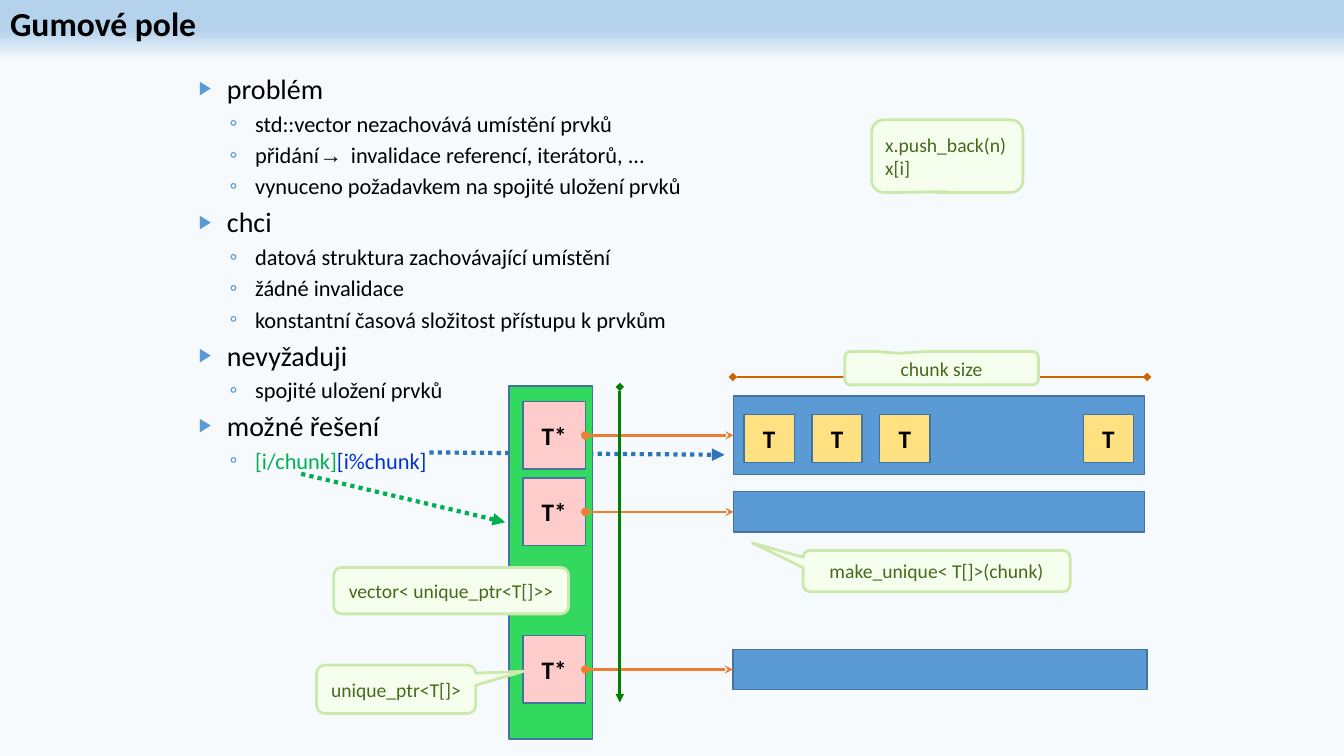
from lxml.etree import SubElement as Sub
from pptx import Presentation
from pptx.dml.color import RGBColor as RGB
from pptx.enum.dml import MSO_LINE as DASH
from pptx.enum.shapes import MSO_CONNECTOR as LINK, MSO_SHAPE as KIND
from pptx.enum.text import MSO_ANCHOR as ANCHOR, PP_ALIGN as ALIGN
from pptx.oxml.ns import qn
from pptx.util import Cm, Pt

FONT = "Calibri"
HUES = {
    "black": "000000", "band": "B5D2EC", "pale": "F7FAFD",
    "blue": "5B9BD5", "edge": "43739E", "gold": "FFE181",
    "green": "33D95E", "pink": "FFCCCC", "orange": "ED7D31",
    "note": "F6FFED", "rim": "CCE9AD", "moss": "456A1C",
    "brown": "CC6600", "navy": "2E75B6", "leaf": "00B050",
    "forest": "008000", "ink": "0033CC",
}

# Outline: level and runs (text, colour, font)
POINTS = [
    (0, [("problém",)]),
    (1, [("std::vector nezachovává umístění prvků",)]),
    (1, [("přidání ",), ("→ ", "black", "Courier New"),
         ("invalidace referencí, iterátorů, ...",)]),
    (1, [("vynuceno požadavkem na spojité uložení prvků",)]),
    (0, [("chci",)]),
    (1, [("datová struktura zachovávající umístění",)]),
    (1, [("žádné invalidace",)]),
    (1, [("konstantní časová složitost přístupu k prvkům",)]),
    (0, [("nevyžaduji",)]),
    (1, [("spojité uložení prvků",)]),
    (0, [("možné řešení",)]),
    (1, [("[i/chunk]", "leaf"), ("[i%chunk]", "ink")]),
]
# Level style: size, left, indent, space before, bullet, bullet percent
LEVELS = [(20, 1.02, -0.71, 4, "▶", 68), (16, 1.73, -0.64, 3.2, "◦", 100)]

# Rows of the array: centre, chunk left, chunk width, chunk height
ROWS = [(10.97, 18.49, 10.36, 1.98), (12.9, 18.49, 10.36, 1.02),
        (16.87, 18.47, 10.44, 1.02)]


def hue(name):
    return RGB.from_string(HUES[name])


def add_run(para, text, size, color="black", font=FONT, bold=False):
    run = para.add_run()
    run.text = text
    run.font.size, run.font.name, run.font.bold = Pt(size), font, bold
    run.font.color.rgb = hue(color)


def add_box(slide, kind, place, fill, edge, width):
    box = slide.shapes.add_shape(kind, *map(Cm, place))
    box.shadow.inherit = False
    box.fill.solid()
    box.fill.fore_color.rgb = hue(fill)
    box.line.color.rgb = hue(edge)
    box.line.width = Pt(width)
    box.text_frame.vertical_anchor = ANCHOR.MIDDLE
    return box


def add_rect(slide, place, fill, text=None):
    box = add_box(slide, KIND.RECTANGLE, place, fill, "edge", 1)
    if text:
        para = box.text_frame.paragraphs[0]
        para.alignment = ALIGN.CENTER
        add_run(para, text, 18, bold=True)
    return box


def add_note(slide, place, tip, lines, align=ALIGN.CENTER):
    note = add_box(slide, KIND.ROUNDED_RECTANGULAR_CALLOUT, place,
                   "note", "rim", 2)
    for i, value in enumerate((*tip, 0.167)):
        note.adjustments[i] = value
    frame = note.text_frame
    for i, text in enumerate(lines):
        para = frame.add_paragraph() if i else frame.paragraphs[0]
        para.alignment = align
        add_run(para, text, 14, "moss")


def add_line(slide, ends, color, width, head=None, tail=None, dash=None):
    line = slide.shapes.add_connector(LINK.STRAIGHT, *map(Cm, ends))
    line.line.color.rgb = hue(color)
    line.line.width = Pt(width)
    if dash:
        line.line.dash_style = dash
    props = line._element.spPr
    for tag, kind in (("a:headEnd", head), ("a:tailEnd", tail)):
        if kind:
            Sub(props.find(qn("a:ln")), qn(tag), type=kind)
    Sub(props, qn("a:effectLst"))
    return line


def paint_back(slide):
    fill = slide.background.fill
    fill.gradient()
    fill.gradient_angle = 270
    stops = slide._element.find(".//" + qn("a:gsLst"))
    for stop in list(stops):
        stops.remove(stop)
    for pos, name in ((0, "band"), (4, "band"), (8, "pale")):
        stop = Sub(stops, qn("a:gs"), pos=str(pos * 1000))
        Sub(stop, qn("a:srgbClr"), val=HUES[name])


def set_title(slide, text):
    title = slide.shapes.title
    title.left, title.top = Cm(0), Cm(0)
    title.width, title.height = Cm(33.87), Cm(1.3)
    title.text_frame.vertical_anchor = ANCHOR.MIDDLE
    para = title.text_frame.paragraphs[0]
    para.alignment, para.line_spacing = ALIGN.LEFT, 0.9
    add_run(para, text, 24, bold=True)


def add_points(slide, place):
    frame = slide.shapes.add_textbox(*map(Cm, place)).text_frame
    frame.word_wrap = True
    for i, (level, runs) in enumerate(POINTS):
        size, left, indent, gap, mark, part = LEVELS[level]
        para = frame.add_paragraph() if i else frame.paragraphs[0]
        para.level, para.space_before = level, Pt(gap)
        props = para._p.get_or_add_pPr()
        props.set("marL", str(Cm(left)))
        props.set("indent", str(Cm(indent)))
        Sub(Sub(props, qn("a:buClr")), qn("a:srgbClr"), val=HUES["blue"])
        Sub(props, qn("a:buSzPct"), val=str(part * 1000))
        Sub(props, qn("a:buFont"), typeface=FONT)
        Sub(props, qn("a:buChar"), char=mark)
        for text, *style in runs:
            add_run(para, text, size, *style)


def add_array(slide):
    add_rect(slide, (12.83, 9.73, 2.11, 8.89), "green")
    for mid, left, width, high in ROWS:
        chunk = add_rect(slide, (left, mid - high / 2, width, high), "blue")
        cell = add_rect(slide, (13.18, mid - 0.85, 1.57, 1.7), "pink", "T*")
        link = add_line(slide, (14.75, mid, left, mid), "orange", 2,
                        "oval", "stealth")
        link.begin_connect(cell, 3)
        link.end_connect(chunk, 1)
    for i in (0, 1, 2, 5):
        add_rect(slide, (18.75 + 1.71 * i, 10.44, 1.27, 1.22), "gold", "T")


def main():
    deck = Presentation()
    deck.slide_width, deck.slide_height = Cm(33.87), Cm(19.05)
    slide = deck.slides.add_slide(deck.slide_layouts[5])
    paint_back(slide)
    set_title(slide, "Gumové pole")

    # Index arrow that runs behind the array
    add_line(slide, (10.82, 11.4, 18.26, 11.46), "navy", 3,
             tail="triangle", dash=DASH.ROUND_DOT)
    add_array(slide)
    add_points(slide, (4.45, 1.68, 13.64, 10.52))

    # Measures and the other index arrow
    add_line(slide, (18.47, 9.5, 28.91, 9.5), "brown", 2,
             "diamond", "diamond")
    add_line(slide, (7.59, 11.94, 12.73, 13.16), "leaf", 3,
             tail="triangle", dash=DASH.ROUND_DOT)
    add_line(slide, (15.62, 9.75, 15.62, 17.7), "forest", 2,
             "diamond", "triangle")

    # Callouts
    add_note(slide, (20.24, 13.87, 6.73, 1.04), (-0.69, -0.68),
             ["make_unique< T[]>(chunk)"])
    add_note(slide, (8.41, 14.3, 5.92, 1.17), (0.08, 0.5),
             ["vector< unique_ptr<T[]>>"])
    add_note(slide, (21.97, 3.02, 3.81, 1.83), (0, 0.49),
             ["x.push_back(n)", "x[i]"], ALIGN.LEFT)
    add_note(slide, (7.98, 16.76, 4.01, 1.22), (0.8, -0.37),
             ["unique_ptr<T[]>"])
    add_note(slide, (21.29, 8.86, 4.88, 0.84), (-0.22, -0.45),
             ["chunk size"])
    deck.save("out.pptx")


if __name__ == "__main__":
    main()
